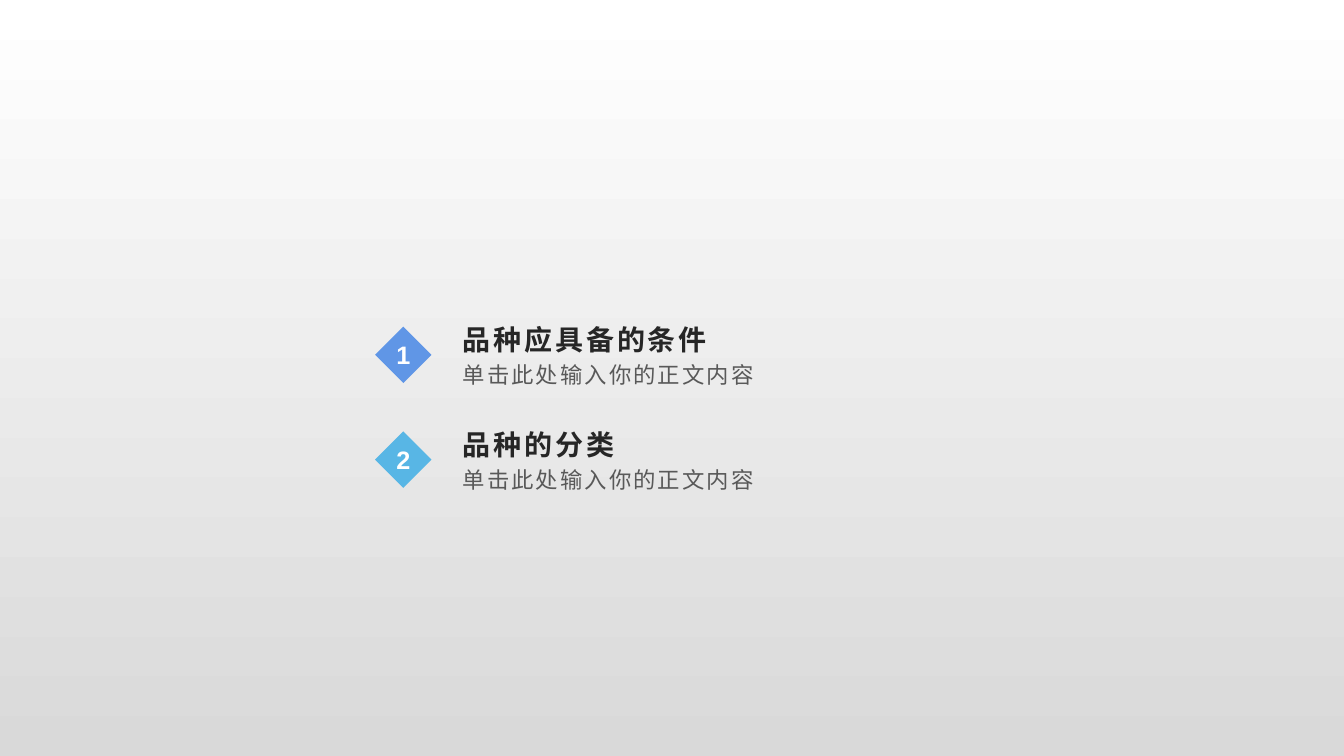
from pptx import Presentation
from pptx.dml.color import RGBColor
from pptx.enum.shapes import MSO_SHAPE
from pptx.enum.text import MSO_ANCHOR, PP_ALIGN
from pptx.util import Inches, Pt

WHITE = RGBColor(0xFF, 0xFF, 0xFF)
SILVER = RGBColor(0xD9, 0xD9, 0xD9)
BLUE = RGBColor(0x60, 0x96, 0xE6)
SKY = RGBColor(0x58, 0xB6, 0xE5)
INK = RGBColor(0x26, 0x26, 0x26)
GREY = RGBColor(0x59, 0x59, 0x59)
DIAMOND = MSO_SHAPE.DIAMOND
TOP, MIDDLE, BOTTOM = MSO_ANCHOR.TOP, MSO_ANCHOR.MIDDLE, MSO_ANCHOR.BOTTOM
LEFT, CENTER = PP_ALIGN.LEFT, PP_ALIGN.CENTER

# Content: heading, body, marker colour
SECTIONS = [
    ("品种应具备的条件", "单击此处输入你的正文内容", BLUE),
    ("品种的分类", "单击此处输入你的正文内容", SKY),
]

# Grid in inches: a marker column and a text column, one row per section
FIRST_ROW, ROW_PITCH = 3.24, 1.04
MARKER_LEFT, MARKER_SIZE = 3.72, 0.56
NUMBER_WIDTH, NUMBER_HEIGHT = 0.34, 0.4
TEXT_LEFT, TEXT_WIDTH = 4.49, 3.78
HEADING_RISE, HEADING_HEIGHT = 0.14, 0.43
BODY_DROP, BODY_HEIGHT = 0.31, 0.39


def add_text(slide, place, text, size, color, bold=False, spacing=0,
             anchor=TOP, align=LEFT, top_inset=0.05, bottom_inset=0.05, wrap=True):
    box = slide.shapes.add_textbox(*map(Inches, place))
    frame = box.text_frame
    frame.word_wrap = wrap
    frame.vertical_anchor = anchor
    frame.margin_top, frame.margin_bottom = Inches(top_inset), Inches(bottom_inset)
    para = frame.paragraphs[0]
    para.alignment = align
    span = para.add_run()
    span.text = text
    font = para.font
    font.name, font.size, font.bold = "Arial", Pt(size), bold
    font.color.rgb = color
    if spacing:  # letter spacing, in hundredths of a point
        span.font.bold = bold
        span.font._element.set("spc", str(int(spacing * 100)))


def add_section(slide, index, heading, body, color):
    top = FIRST_ROW + index * ROW_PITCH

    # Marker
    marker = slide.shapes.add_shape(
        DIAMOND, *map(Inches, (MARKER_LEFT, top, MARKER_SIZE, MARKER_SIZE)))
    marker.shadow.inherit = False
    marker.fill.solid()
    marker.fill.fore_color.rgb = color
    marker.line.fill.background()

    # Number centred on the marker
    number_place = (MARKER_LEFT + (MARKER_SIZE - NUMBER_WIDTH) / 2,
                    top + (MARKER_SIZE - NUMBER_HEIGHT) / 2,
                    NUMBER_WIDTH, NUMBER_HEIGHT)
    add_text(slide, number_place, str(index + 1), 18, WHITE, bold=True,
             align=CENTER, wrap=False)

    # Heading and body
    add_text(slide, (TEXT_LEFT, top - HEADING_RISE, TEXT_WIDTH, HEADING_HEIGHT),
             heading, 20, INK, bold=True, spacing=2, anchor=BOTTOM, bottom_inset=0)
    add_text(slide, (TEXT_LEFT, top + BODY_DROP, TEXT_WIDTH, BODY_HEIGHT),
             body, 16, GREY, spacing=1.5, anchor=MIDDLE, top_inset=0)


def main():
    deck = Presentation()
    deck.slide_width, deck.slide_height = Inches(13.33), Inches(7.5)
    slide = deck.slides.add_slide(deck.slide_layouts[6])

    # Background fading downwards
    fill = slide.background.fill
    fill.gradient()
    fill.gradient_angle = 270
    for stop, color, position in zip(fill.gradient_stops, (WHITE, SILVER), (0, 1)):
        stop.color.rgb = color
        stop.position = position

    for index, section in enumerate(SECTIONS):
        add_section(slide, index, *section)
    deck.save("out.pptx")


if __name__ == "__main__":
    main()
